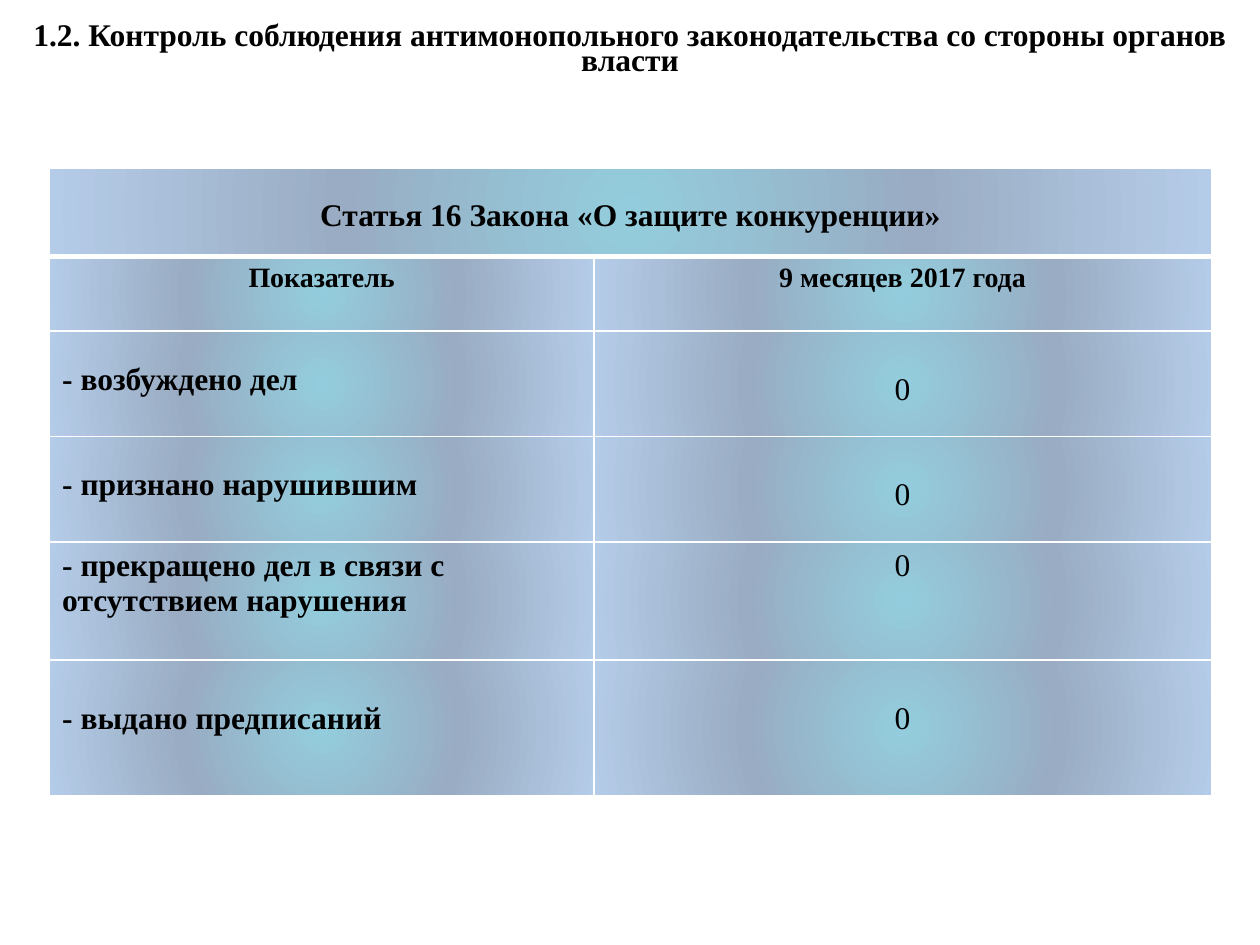
"""Builds a slide with a table on antimonopoly law compliance."""
from lxml import etree
from pptx import Presentation
from pptx.dml.color import RGBColor
from pptx.enum.text import MSO_ANCHOR, MSO_AUTO_SIZE, PP_ALIGN
from pptx.oxml import parse_xml
from pptx.oxml.ns import nsdecls, qn
from pptx.util import Cm, Pt

LEFT, CENTER = PP_ALIGN.LEFT, PP_ALIGN.CENTER
TOP = MSO_ANCHOR.TOP
NO_FIT = MSO_AUTO_SIZE.NONE

FONT = "Times New Roman"
BLACK, WHITE = "000000", "FFFFFF"
GLOW = [(0, "93CDDD"), (50, "99ACC3"), (100, "B5CCE8")]
COL_WIDTHS = [10.97, 12.45]
ROW_HEIGHTS = [1.78, 1.5, 2.13, 2.13, 2.37, 2.74]
PAD = 0.13

TITLE = ("1.2. Контроль соблюдения антимонопольного законодательства "
         "со стороны органов власти")
HEADING = "Статья 16 Закона «О защите конкуренции»"
COLUMN_HEADS = ["Показатель", "9 месяцев 2017 года"]
INDICATORS = [
    ("- возбуждено дел", 0.63, "0", 0.83),
    ("- признано нарушившим", 0.63, "0", 0.83),
    ("- прекращено дел в связи с отсутствием нарушения", PAD, "0", PAD),
    ("- выдано предписаний", 0.83, "0", 0.83),
]


def color(value):
    return RGBColor.from_string(value)


def write(tf, text, size=18, bold=True, align=LEFT, spacing=1.0):
    p = tf.paragraphs[0]
    p.alignment = align
    p.line_spacing = spacing
    r = p.add_run()
    r.text = text
    r.font.name = FONT
    r.font.size = Pt(size)
    r.font.bold = bold
    r.font.color.rgb = color(BLACK)


def radial_fill(stops):
    gs = "".join(f'<a:gs pos="{pos * 1000}"><a:srgbClr val="{value}"/></a:gs>'
                 for pos, value in stops)
    return parse_xml(
        f'<a:gradFill {nsdecls("a")} rotWithShape="1"><a:gsLst>{gs}</a:gsLst>'
        '<a:path path="circle"><a:fillToRect l="50000" t="50000" r="50000" '
        'b="50000"/></a:path></a:gradFill>')


class SlideBuilder:
    def __init__(self, prs):
        self.slide = prs.slides.add_slide(prs.slide_layouts[5])

    def title(self, text, left, top, width, height):
        sp = self.slide.shapes.title
        sp.left, sp.top = Cm(left), Cm(top)
        sp.width, sp.height = Cm(width), Cm(height)
        tf = sp.text_frame
        tf.word_wrap = True
        tf.auto_size = NO_FIT
        tf.vertical_anchor = TOP
        write(tf, text, align=CENTER, spacing=0.66)

    def table(self, left, top, widths, heights):
        frame = self.slide.shapes.add_table(
            len(heights), len(widths), Cm(left), Cm(top),
            Cm(sum(widths)), Cm(sum(heights)))
        table = frame.table
        table.first_row = table.horz_banding = False
        for column, width in zip(table.columns, widths):
            column.width = Cm(width)
        for row, height in zip(table.rows, heights):
            row.height = Cm(height)
        return table

    def style_cell(self, cell, top_line=1, bottom_line=1):
        tc_pr = cell._tc.get_or_add_tcPr()
        lines = {"a:lnL": 1, "a:lnR": 1, "a:lnT": top_line, "a:lnB": bottom_line}
        for tag, width in lines.items():
            ln = etree.SubElement(tc_pr, qn(tag), w=str(Pt(width)))
            fill = etree.SubElement(ln, qn("a:solidFill"))
            etree.SubElement(fill, qn("a:srgbClr"), val=WHITE)
        tc_pr.append(radial_fill(GLOW))

    def cell(self, cell, text, top=PAD, **fmt):
        cell.margin_top = Cm(top)
        cell.vertical_anchor = TOP
        write(cell.text_frame, text, **fmt)


def main():
    prs = Presentation()
    prs.slide_width, prs.slide_height = Cm(25.4), Cm(19.05)
    s = SlideBuilder(prs)
    s.title(TITLE, 0, 0.4, 25.4, 1.27)

    table = s.table(1, 3.39, COL_WIDTHS, ROW_HEIGHTS)
    for i in range(len(ROW_HEIGHTS)):
        for j in range(len(COL_WIDTHS)):
            s.style_cell(table.cell(i, j), top_line=3 if i == 1 else 1,
                         bottom_line=3 if i == 0 else 1)
    table.cell(0, 0).merge(table.cell(0, 1))
    s.cell(table.cell(0, 0), HEADING, top=0.6, align=CENTER)
    for j, head in enumerate(COLUMN_HEADS):
        s.cell(table.cell(1, j), head, size=16, align=CENTER)
    for i, (label, label_top, value, value_top) in enumerate(INDICATORS, 2):
        s.cell(table.cell(i, 0), label, top=label_top)
        s.cell(table.cell(i, 1), value, top=value_top, bold=False, align=CENTER)
    prs.save("out.pptx")


if __name__ == "__main__":
    main()
